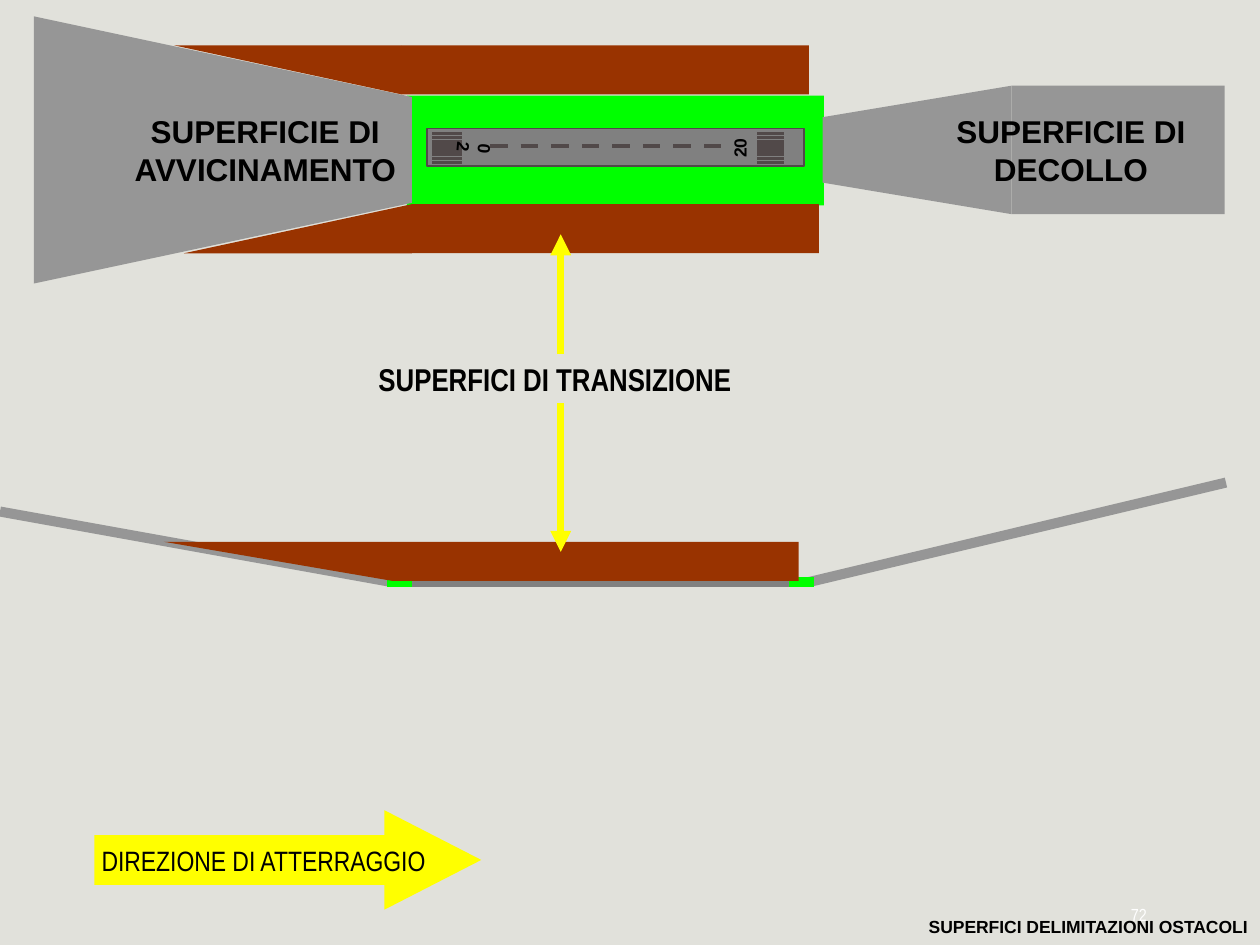
from pptx import Presentation
from pptx.dml.color import RGBColor
from pptx.enum.dml import MSO_LINE
from pptx.enum.shapes import MSO_CONNECTOR, MSO_SHAPE
from pptx.enum.text import MSO_ANCHOR, PP_ALIGN
from pptx.oxml.ns import qn
from pptx.util import Inches, Pt
from lxml.etree import SubElement

BACKDROP = RGBColor(0xE1, 0xE1, 0xDB)
GREEN = RGBColor(0x00, 0xFF, 0x00)
ASPHALT = RGBColor(0x80, 0x80, 0x80)
MARKING = RGBColor(0x51, 0x49, 0x49)
SURFACE = RGBColor(0x96, 0x96, 0x96)
BROWN = RGBColor(0x99, 0x33, 0x00)
YELLOW = RGBColor(0xFF, 0xFF, 0x00)
BLACK = RGBColor(0x00, 0x00, 0x00)
WHITE = RGBColor(0xFF, 0xFF, 0xFF)


def paint(shape, fill):
    shape.shadow.inherit = False
    shape.fill.solid()
    shape.fill.fore_color.rgb = fill
    shape.line.fill.background()


def add_block(slide, kind, box, fill, flips=()):
    block = slide.shapes.add_shape(kind, *map(Inches, box))
    paint(block, fill)
    for flip in flips:
        block._element.spPr.find(qn("a:xfrm")).set(flip, "1")
    return block


def add_outline(slide, corners, fill):
    start, *others = [(Inches(x), Inches(y)) for x, y in corners]
    builder = slide.shapes.build_freeform(*start)
    builder.add_line_segments(others, close=True)
    outline = builder.convert_to_shape()
    paint(outline, fill)
    return outline


def add_line(slide, start, end, color, width, dash=None, arrow=False):
    line = slide.shapes.add_connector(
        MSO_CONNECTOR.STRAIGHT, *map(Inches, (*start, *end)))
    line.line.color.rgb = color
    line.line.width = Pt(width)
    if dash:
        line.line.dash_style = dash
    properties = line._element.spPr
    if arrow:
        SubElement(properties.find(qn("a:ln")), qn("a:tailEnd"), type="triangle")
    SubElement(properties, qn("a:effectLst"))


def write(shape, text, size, font="Arial", bold=True, color=BLACK,
          align=PP_ALIGN.CENTER, anchor=MSO_ANCHOR.MIDDLE, wrap=True):
    frame = shape.text_frame
    frame.word_wrap = wrap
    frame.vertical_anchor = anchor
    frame.text = text
    for paragraph in frame.paragraphs:
        paragraph.alignment = align
        paragraph.font.name = font
        paragraph.font.size = Pt(size)
        paragraph.font.bold = bold
        paragraph.font.color.rgb = color


def add_label(slide, box, text, size, rotation=0, **style):
    label = slide.shapes.add_textbox(*map(Inches, box))
    label.rotation = rotation
    write(label, text, size, **style)


def add_runway(slide):
    add_block(slide, MSO_SHAPE.RECTANGLE, (3.23, 0.76, 3.31, 0.87), GREEN)
    runway = add_block(slide, MSO_SHAPE.RECTANGLE, (3.39, 1.02, 2.99, 0.3), ASPHALT)
    runway.line.color.rgb = MARKING
    runway.line.width = Pt(1)
    for left, right in ((3.43, 3.67), (6.01, 6.22)):
        for stripe in range(8):
            y = 1.06 + stripe * 0.23 / 7
            add_line(slide, (left, y), (right, y), MARKING, 2)
    add_label(slide, (3.59, 1.04, 0.35, 0.27), "02", 10, rotation=95)
    add_line(slide, (3.89, 1.16), (5.79, 1.16), MARKING, 2.5, dash=MSO_LINE.DASH)
    add_label(slide, (5.69, 1.04, 0.36, 0.27), "20", 10, rotation=270)


def add_landing_direction(slide):
    arrow = add_block(slide, MSO_SHAPE.RIGHT_ARROW, (0.75, 6.43, 3.07, 0.79), YELLOW)
    arrow.adjustments[1] = 0.974
    write(arrow, "DIREZIONE DI ATTERRAGGIO", 16, font="Arial Narrow",
          bold=False, wrap=False)


def add_takeoff_and_approach(slide):
    add_outline(slide, [(8.03, 0.68), (6.53, 0.93), (6.53, 1.45), (8.03, 1.7)], SURFACE)
    add_block(slide, MSO_SHAPE.RECTANGLE, (8.03, 0.68, 1.69, 1.02), SURFACE)
    approach = add_outline(
        slide, [(0.27, 0.13), (3.27, 0.77), (3.27, 1.61), (0.27, 2.25)], SURFACE)
    approach.text_frame.margin_left = Inches(0.77)
    write(approach, "SUPERFICIE DI\nAVVICINAMENTO", 18, wrap=False)
    add_label(slide, (7.28, 0.84, 2.44, 0.7), "SUPERFICIE DI DECOLLO", 18,
              anchor=MSO_ANCHOR.TOP)


def add_transition(slide, left, top, height, flips):
    wedge = 1.81
    add_block(slide, MSO_SHAPE.RECTANGLE, (left, top, 3.23, height), BROWN)
    add_block(slide, MSO_SHAPE.RIGHT_TRIANGLE,
              (left - wedge, top, wedge, height), BROWN, flips)


def add_side_profile(slide):
    ground = 4.62
    for start, end, color in (
        ((0, 4.06), (3.11, ground), SURFACE),
        ((6.42, ground), (9.73, 3.83), SURFACE),
        ((3.27, ground), (6.26, ground), ASPHALT),
        ((6.26, ground), (6.46, ground), GREEN),
        ((3.07, ground), (3.27, ground), GREEN),
    ):
        add_line(slide, start, end, color, 5.75)


def main():
    deck = Presentation()
    deck.slide_width, deck.slide_height = Inches(10), Inches(7.5)
    slide = deck.slides.add_slide(deck.slide_layouts[6])
    slide.background.fill.solid()
    slide.background.fill.fore_color.rgb = BACKDROP

    add_label(slide, (8.12, 7.06, 1.08, 0.4), "72", 10, font="Arial Narrow",
              bold=False, color=WHITE, align=PP_ALIGN.RIGHT)
    add_runway(slide)
    add_landing_direction(slide)
    add_takeoff_and_approach(slide)
    add_transition(slide, 3.27, 1.62, 0.39, ["flipH"])
    add_side_profile(slide)
    add_transition(slide, 3.11, 4.3, 0.31, ["flipH", "flipV"])
    add_transition(slide, 3.19, 0.36, 0.39, ["flipH", "flipV"])
    add_label(slide, (7.13, 7.22, 2.87, 0.27), "SUPERFICI DELIMITAZIONI OSTACOLI",
              10, align=PP_ALIGN.RIGHT, anchor=MSO_ANCHOR.TOP)
    add_label(slide, (2.32, 2.81, 4.17, 0.4), "SUPERFICI DI TRANSIZIONE", 18,
              font="Arial Narrow", anchor=MSO_ANCHOR.TOP)
    for start, end in ((2.81, 1.86), (3.2, 4.38)):
        add_line(slide, (4.45, start), (4.45, end), YELLOW, 4, arrow=True)
    deck.save("out.pptx")


if __name__ == "__main__":
    main()
